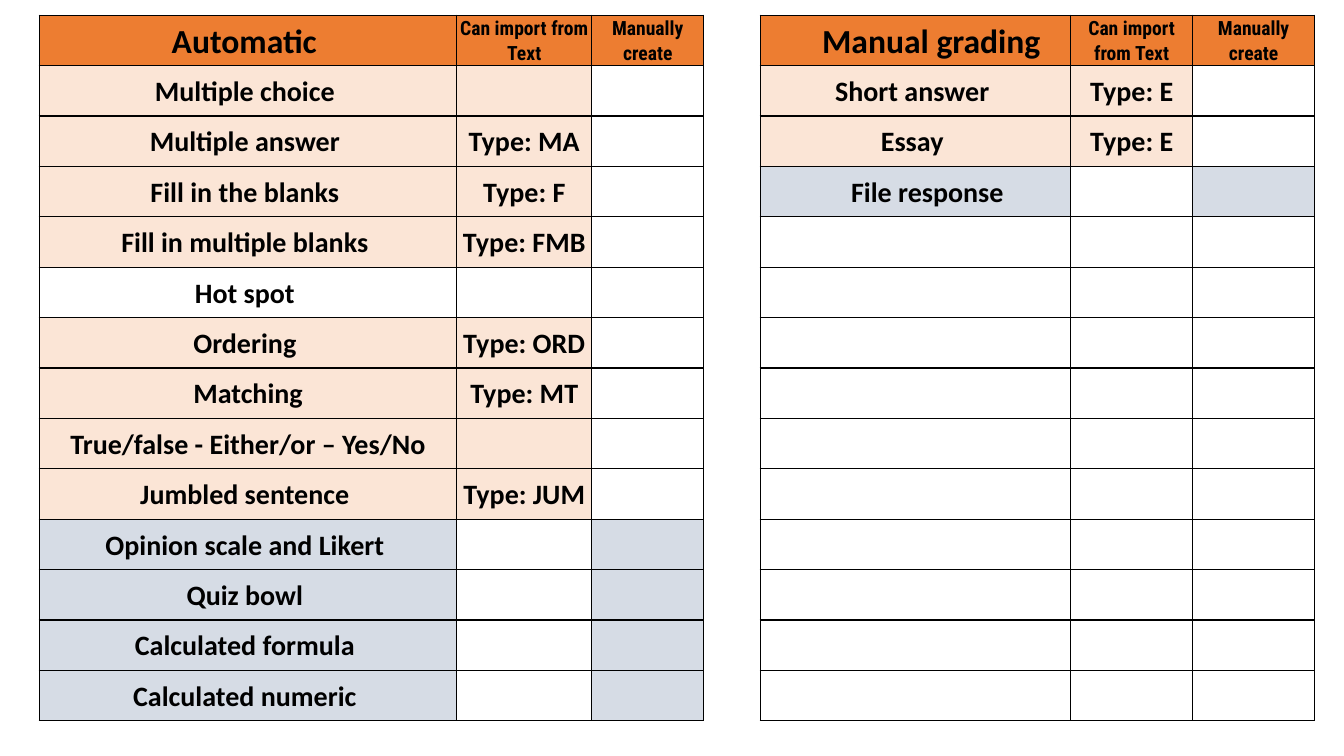
"""Builds a slide comparing automatically and manually graded question types."""
from dataclasses import dataclass
from itertools import zip_longest

from lxml.etree import SubElement
from pptx import Presentation
from pptx.dml.color import RGBColor
from pptx.enum.text import MSO_ANCHOR, PP_ALIGN
from pptx.oxml.ns import qn
from pptx.table import _Cell
from pptx.util import Emu, Pt

PX = 9144
BLACK, WHITE = "000000", "FFFFFF"
ORANGE, PEACH, BLUE_GREY = "ED7D31", "FBE5D6", "D6DCE5"
COLUMN_WIDTHS = (414, 134, 111, 56, 308, 121, 121)
ROW_HEIGHT = 50


@dataclass(frozen=True)
class QuestionRow:
    """One row of a grading group: three texts, three fills and a name indent."""
    name: str = ""
    importing: str = ""
    creating: str = ""
    fills: tuple[str, str, str] = (WHITE, WHITE, WHITE)
    indent: int = 0
    is_header: bool = False


def px(length: int) -> Emu:
    """Turn px into EMU."""
    return Emu(length * PX)


def color(value: str) -> RGBColor:
    """Turn a hex string into a colour."""
    return RGBColor.from_string(value)


def header(name: str, indent: int = 0) -> QuestionRow:
    """Describe the heading of a group."""
    return QuestionRow(name, "Can import from Text", "Manually create",
                       (ORANGE, ORANGE, ORANGE), indent, True)


def importable(name: str, code: str = "") -> QuestionRow:
    """Describe a question type that can be imported."""
    return QuestionRow(name, f"Type: {code}" if code else "", fills=(PEACH, PEACH, WHITE))


def manual(name: str, indent: int = 0) -> QuestionRow:
    """Describe a question type that must be created by hand."""
    return QuestionRow(name, fills=(BLUE_GREY, WHITE, BLUE_GREY), indent=indent)


AUTOMATIC = (
    header("Automatic "),
    importable("Multiple choice "),
    importable("Multiple answer ", "MA"),
    importable("Fill in the blanks ", "F"),
    importable("Fill in multiple blanks ", "FMB"),
    QuestionRow("Hot spot "),
    importable("Ordering ", "ORD"),
    importable("Matching", "MT"),
    importable("True/false - Either/or – Yes/No"),
    importable("Jumbled sentence ", "JUM"),
    manual("Opinion scale and Likert "),
    manual("Quiz bowl "),
    manual("Calculated formula "),
    manual("Calculated numeric "),
)
MANUAL_GRADING = (
    header("Manual grading ", indent=39),
    importable("Short answer ", "E"),
    importable("Essay ", "E"),
    manual("File response ", indent=30),
)


def write(cell: _Cell, text: str, *, size: int = 20, font: str = "Calibri",
          indent: int = 0) -> None:
    """Write bold centred text into a cell."""
    cell.vertical_anchor = MSO_ANCHOR.MIDDLE
    cell.margin_left = cell.margin_right = px(3)
    cell.margin_top = cell.margin_bottom = 0
    paragraph = cell.text_frame.paragraphs[0]
    paragraph.alignment = PP_ALIGN.CENTER
    paragraph.line_spacing = 1.07
    if indent:
        properties = paragraph._p.get_or_add_pPr()
        properties.set("marL", str(px(indent)))
        properties.set("indent", "0")
    run = paragraph.add_run()
    run.text = text
    run.font.size = Pt(size)
    run.font.name = font
    run.font.bold = True
    run.font.color.rgb = color(BLACK)


def paint(cell: _Cell, fill: str, edges: str = "LRTB") -> None:
    """Fill a cell and rule the given edges in black."""
    properties = cell._tc.get_or_add_tcPr()
    for position, edge in enumerate("LRTB"):
        line = SubElement(properties, qn(f"a:ln{edge}"), w=str(Pt(1)))
        if edge in edges:
            solid = SubElement(line, qn("a:solidFill"))
            SubElement(solid, qn("a:srgbClr"), val=BLACK)
        else:
            SubElement(line, qn("a:noFill"))
        properties.insert(position, line)
    cell.fill.solid()
    cell.fill.fore_color.rgb = color(fill)


def draw_row(cells: list[_Cell], question: QuestionRow) -> None:
    """Draw the three cells of one group row."""
    texts = (question.name, question.importing, question.creating)
    for column, (cell, text, fill) in enumerate(zip(cells, texts, question.fills)):
        paint(cell, fill)
        if not text:
            continue
        if column and question.is_header:
            write(cell, text, size=14, font="Roboto Condensed")
        else:
            write(cell, text, size=24 if question.is_header else 20,
                  indent=0 if column else question.indent)


def main() -> None:
    """Build and save the slide."""
    presentation = Presentation()
    presentation.slide_width, presentation.slide_height = px(1333), px(750)
    slide = presentation.slides.add_slide(presentation.slide_layouts[6])
    grading = slide.shapes.add_table(
        len(AUTOMATIC), len(COLUMN_WIDTHS), px(39), px(15),
        px(sum(COLUMN_WIDTHS)), px(ROW_HEIGHT * len(AUTOMATIC))).table
    grading.first_row = grading.horz_banding = False
    for column, width in zip(grading.columns, COLUMN_WIDTHS):
        column.width = px(width)
    groups = zip_longest(AUTOMATIC, MANUAL_GRADING, fillvalue=QuestionRow())
    for row, (automatic, graded_by_hand) in zip(grading.rows, groups):
        row.height = px(ROW_HEIGHT)
        cells = list(row.cells)
        draw_row(cells[:3], automatic)
        paint(cells[3], WHITE, edges="LR")
        draw_row(cells[4:], graded_by_hand)
    presentation.save("out.pptx")


if __name__ == "__main__":
    main()
